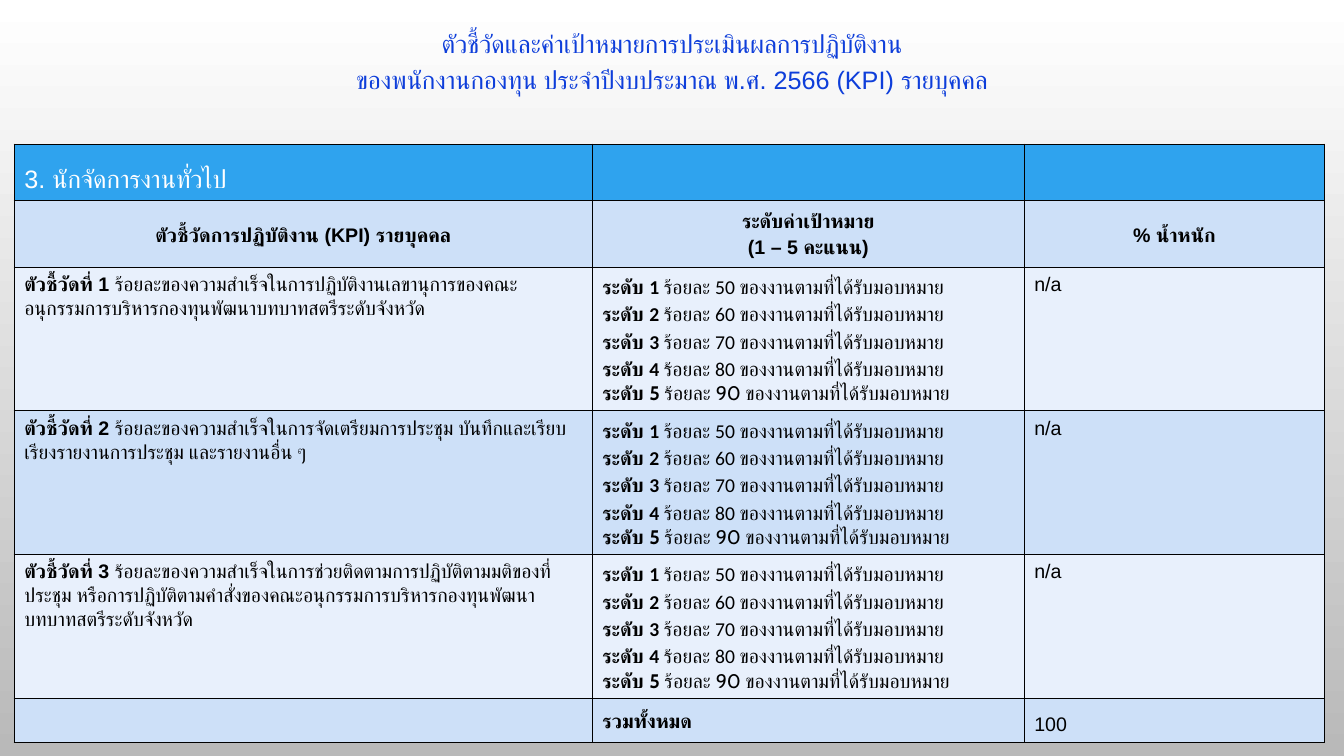
from lxml import etree
from pptx import Presentation
from pptx.dml.color import RGBColor
from pptx.enum.text import MSO_ANCHOR, MSO_AUTO_SIZE, PP_ALIGN
from pptx.oxml.ns import qn
from pptx.util import Pt

TOP, MIDDLE = MSO_ANCHOR.TOP, MSO_ANCHOR.MIDDLE
LEFT, CENTER = PP_ALIGN.LEFT, PP_ALIGN.CENTER
NO_FIT = MSO_AUTO_SIZE.NONE

WHITE = RGBColor(0xFF, 0xFF, 0xFF)
BLACK = RGBColor(0, 0, 0)
GREY = RGBColor(0xB9, 0xB9, 0xB9)
TITLE_BLUE = RGBColor(0x0E, 0x3E, 0xDA)
BANNER_BLUE = RGBColor(0x2F, 0xA3, 0xEE)
BAND_DARK = RGBColor(0xCD, 0xE0, 0xF8)
BAND_LIGHT = RGBColor(0xE8, 0xF0, 0xFC)

BODY = dict(name="Arial", size=Pt(14), bold=False, color=BLACK)
BOLD = BODY | dict(bold=True)
TITLE = BODY | dict(size=Pt(18), color=TITLE_BLUE)
BANNER = TITLE | dict(color=WHITE)
EXACT = Pt(16.8)

TITLE_LINES = ["ตัวชี้วัดและค่าเป้าหมายการประเมินผลการปฏิบัติงาน",
               "ของพนักงานกองทุน ประจำปีงบประมาณ พ.ศ. 2566 (KPI) รายบุคคล"]
HEADINGS = [["ตัวชี้วัดการปฏิบัติงาน (KPI) รายบุคคล"],
            ["ระดับค่าเป้าหมาย", "(1 – 5 คะแนน)"],
            ["% น้ำหนัก"]]
INDICATORS = [
    "ร้อยละของความสำเร็จในการปฏิบัติงานเลขานุการของคณะอนุกรรมการบริหารกองทุนพัฒนาบทบาทสตรีระดับจังหวัด",
    "ร้อยละของความสำเร็จในการจัดเตรียมการประชุม บันทึกและเรียบเรียงรายงานการประชุม และรายงานอื่น ๆ",
    "ร้อยละของความสำเร็จในการช่วยติดตามการปฏิบัติตามมติของที่ประชุม "
    "หรือการปฏิบัติตามคำสั่งของคณะอนุกรรมการบริหารกองทุนพัฒนาบทบาทสตรีระดับจังหวัด",
]
COL_WIDTHS = [412.9, 308.5, 214.6]
ROW_HEIGHTS = [40, 47.8, 101.4, 101.4, 101.4, 32]


def set_font(font, style):
    for key, value in style.items():
        if key == "color":
            font.color.rgb = value
        else:
            setattr(font, key, value)


def write(tf, paragraphs, align=LEFT):
    """Each paragraph is (line spacing, [(text, style), ...])."""
    for i, (spacing, runs) in enumerate(paragraphs):
        p = tf.add_paragraph() if i else tf.paragraphs[0]
        p.alignment, p.line_spacing = align, spacing
        p.space_before = p.space_after = Pt(0)
        for text, style in runs:
            r = p.add_run()
            r.text = text
            set_font(r.font, style)


def add_borders(cell):
    tc_pr = cell._tc.get_or_add_tcPr()
    for side in ("lnL", "lnR", "lnT", "lnB"):
        ln = etree.SubElement(tc_pr, qn("a:" + side), w=str(Pt(1)))
        fill = etree.SubElement(ln, qn("a:solidFill"))
        etree.SubElement(fill, qn("a:srgbClr"), val=str(BLACK))


def level_paragraphs():
    paragraphs = []
    for level in range(1, 6):
        last = level == 5
        face = dict(name="Cabin" if last else "Calibri")
        paragraphs.append((1.0 if last else 1.15, [
            (f"ระดับ {level} ", BOLD | face),
            (f"ร้อยละ {40 + level * 10} ของงานตามที่ได้รับมอบหมาย", BODY | face)]))
    return paragraphs


def add_title(s, left, top, width, height):
    sp = s.shapes.title
    sp.left, sp.top, sp.width, sp.height = Pt(left), Pt(top), Pt(width), Pt(height)
    tf = sp.text_frame
    tf.word_wrap, tf.auto_size, tf.vertical_anchor = True, NO_FIT, TOP
    write(tf, [(1.2, [(line, TITLE)]) for line in TITLE_LINES], CENTER)


def add_kpi_table(s, left, top, width, height):
    table = s.shapes.add_table(len(ROW_HEIGHTS), len(COL_WIDTHS), Pt(left),
                               Pt(top), Pt(width), Pt(height)).table
    table.first_row = table.horz_banding = False
    for column, size in zip(table.columns, COL_WIDTHS):
        column.width = Pt(size)
    for row, size in zip(table.rows, ROW_HEIGHTS):
        row.height = Pt(size)

    # Fills and borders
    for i, row in enumerate(table.rows):
        for cell in row.cells:
            add_borders(cell)
            cell.fill.solid()
            cell.fill.fore_color.rgb = (
                BANNER_BLUE if i == 0 else BAND_DARK if i % 2 else BAND_LIGHT)
            set_font(cell.text_frame.paragraphs[0].font, BODY)

    # Position banner
    banner = table.cell(0, 0)
    banner.vertical_anchor = MIDDLE
    write(banner.text_frame, [(1.5, [("3. นักจัดการงานทั่วไป", BANNER)])])

    # Column headings
    for j, lines in enumerate(HEADINGS):
        cell = table.cell(1, j)
        cell.vertical_anchor = MIDDLE
        write(cell.text_frame, [(1.2, [(line, BOLD)]) for line in lines], CENTER)

    # Indicators
    for n, indicator in enumerate(INDICATORS, 1):
        name, levels, weight = table.rows[n + 1].cells
        write(name.text_frame,
              [(EXACT, [(f"ตัวชี้วัดที่ {n} ", BOLD), (indicator, BODY)])])
        write(levels.text_frame, level_paragraphs())
        write(weight.text_frame, [(EXACT, [("n/a", BODY)])])

    # Total
    total = len(ROW_HEIGHTS) - 1
    write(table.cell(total, 1).text_frame, [(1.5, [("รวมทั้งหมด", BOLD)])])
    write(table.cell(total, 2).text_frame, [(1.5, [("100", BODY)])])


def add_background(s):
    fill = s.background.fill
    fill.gradient()
    fill.gradient_angle = 270
    for stop, color, position in zip(fill.gradient_stops, (WHITE, GREY), (0, 1)):
        stop.color.rgb, stop.position = color, position


def main():
    prs = Presentation()
    prs.slide_width, prs.slide_height = Pt(960), Pt(540)
    s = prs.slides.add_slide(prs.slide_layouts[5])
    add_background(s)
    add_title(s, 0, 12, 960, 88.6)
    add_kpi_table(s, 10.2, 103, sum(COL_WIDTHS), sum(ROW_HEIGHTS))
    prs.save("out.pptx")


if __name__ == "__main__":
    main()
